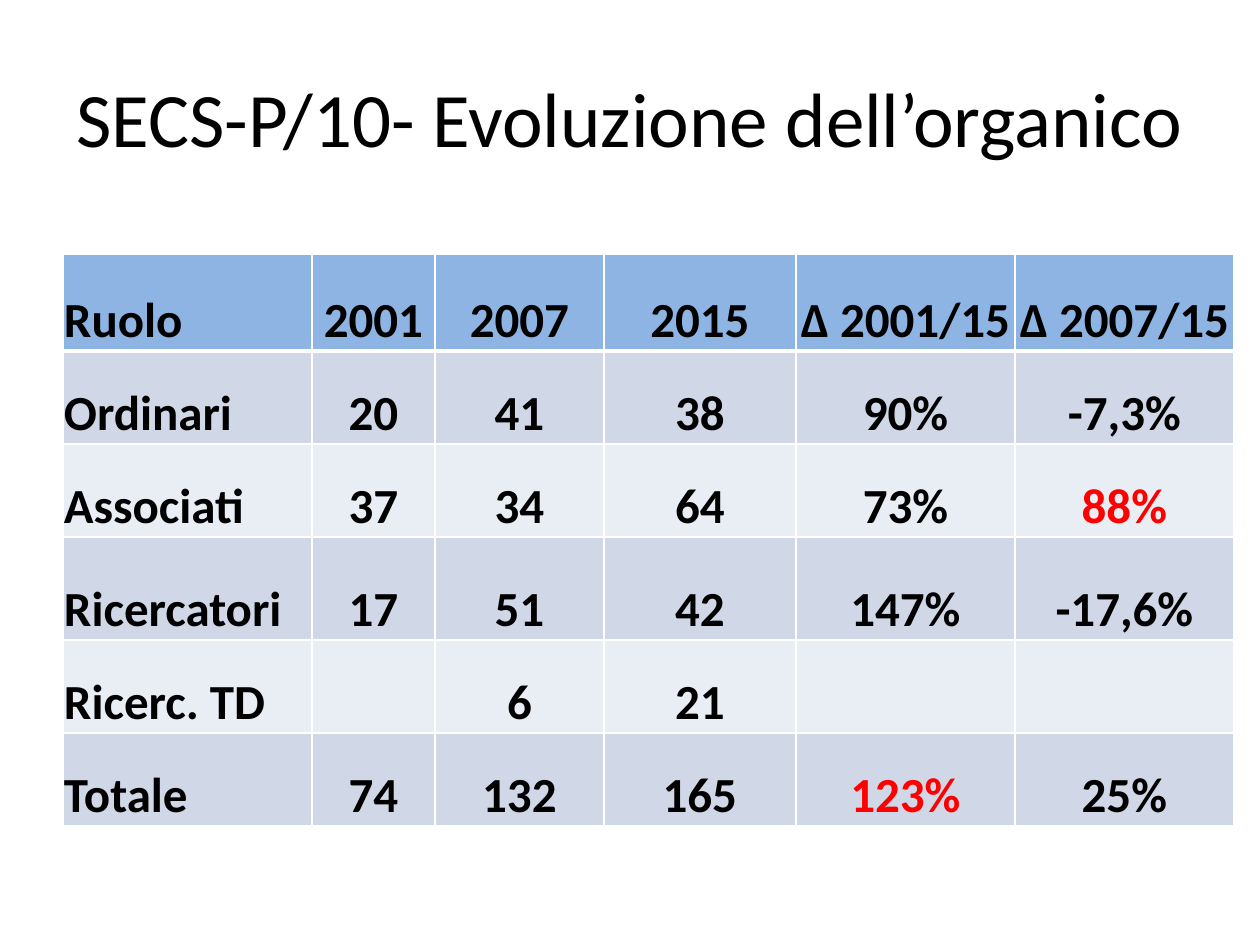
from lxml.etree import SubElement
from pptx import Presentation
from pptx.dml.color import RGBColor
from pptx.enum.text import MSO_ANCHOR as Anchor, PP_ALIGN as Align
from pptx.oxml.ns import qn
from pptx.util import Emu, Pt

PX = 914400 / 126

BLACK, WHITE, RED = "000000", "FFFFFF", "FF0000"
HEADER_FILL, ODD_FILL, EVEN_FILL = "8EB4E3", "D0D8E8", "E9EDF4"

COLUMN_WIDTHS = [249, 123, 169, 192, 219, 219]
ROW_HEIGHTS = [97, 93, 93, 103, 93, 93]
STAFF = [
    ["Ruolo", "2001", "2007", "2015", "∆ 2001/15", "∆ 2007/15"],
    ["Ordinari", "20", "41", "38", "90%", "-7,3%"],
    ["Associati", "37", "34", "64", "73%", "88%"],
    ["Ricercatori", "17", "51", "42", "147%", "-17,6%"],
    ["Ricerc. TD", "", "6", "21", "", ""],
    ["Totale", "74", "132", "165", "123%", "25%"],
]
HIGHLIGHTS = {"88%", "123%"}


def px(length):
    return Emu(round(length * PX))


def color(value):
    return RGBColor.from_string(value)


class SlideBuilder:
    font = "Calibri"
    title_size = 44
    table_size = 28

    def __init__(self, slide):
        self.slide = slide

    def style(self, paragraph, size, ink, align, bold=False):
        paragraph.alignment = align
        for target in [paragraph, *paragraph.runs]:
            target.font.name = self.font
            target.font.size = Pt(size)
            target.font.bold = bold
            target.font.color.rgb = color(ink)

    def title(self, text, x, y, width, height):
        box = self.slide.shapes.add_textbox(px(x), px(y), px(width), px(height))
        frame = box.text_frame
        frame.word_wrap = True
        frame.vertical_anchor = Anchor.MIDDLE
        frame.text = text
        self.style(frame.paragraphs[0], self.title_size, BLACK, Align.CENTER)

    def borders(self, cell, widths):
        properties = cell._tc.get_or_add_tcPr()
        for side, points in widths.items():
            line = SubElement(properties, qn(f"a:ln{side}"), w=str(Pt(points)))
            fill = SubElement(line, qn("a:solidFill"))
            SubElement(fill, qn("a:srgbClr"), val=WHITE)

    def cell(self, cell, text, row, column):
        # The rule under the header is thicker than the others
        self.borders(cell, {"L": 1, "R": 1, "T": 3 if row == 1 else 1,
                            "B": 3 if row == 0 else 1})
        cell.fill.solid()
        band = ODD_FILL if row % 2 else EVEN_FILL
        cell.fill.fore_color.rgb = color(band if row else HEADER_FILL)
        cell.vertical_anchor = Anchor.BOTTOM
        cell.margin_left = cell.margin_right = cell.margin_top = px(1)
        cell.margin_bottom = 0
        cell.text_frame.text = text
        self.style(cell.text_frame.paragraphs[0], self.table_size,
                   RED if text in HIGHLIGHTS else BLACK,
                   Align.CENTER if column else Align.LEFT, bold=True)

    def table(self, rows, x, y, widths, heights):
        table = self.slide.shapes.add_table(
            len(rows), len(widths), px(x), px(y),
            px(sum(widths)), px(sum(heights))).table
        for column, width in zip(table.columns, widths):
            column.width = px(width)
        for r, (values, height) in enumerate(zip(rows, heights)):
            table.rows[r].height = px(height)
            for c, text in enumerate(values):
                self.cell(table.cell(r, c), text, r, c)


def main():
    presentation = Presentation()
    presentation.slide_width, presentation.slide_height = px(1260), px(945)
    builder = SlideBuilder(
        presentation.slides.add_slide(presentation.slide_layouts[6]))

    # Heading
    builder.title("SECS-P/10- Evoluzione dell’organico", 63, 38, 1134, 157)

    # Staff by role and year
    builder.table(STAFF, 63, 254, COLUMN_WIDTHS, ROW_HEIGHTS)

    presentation.save("out.pptx")


if __name__ == "__main__":
    main()
